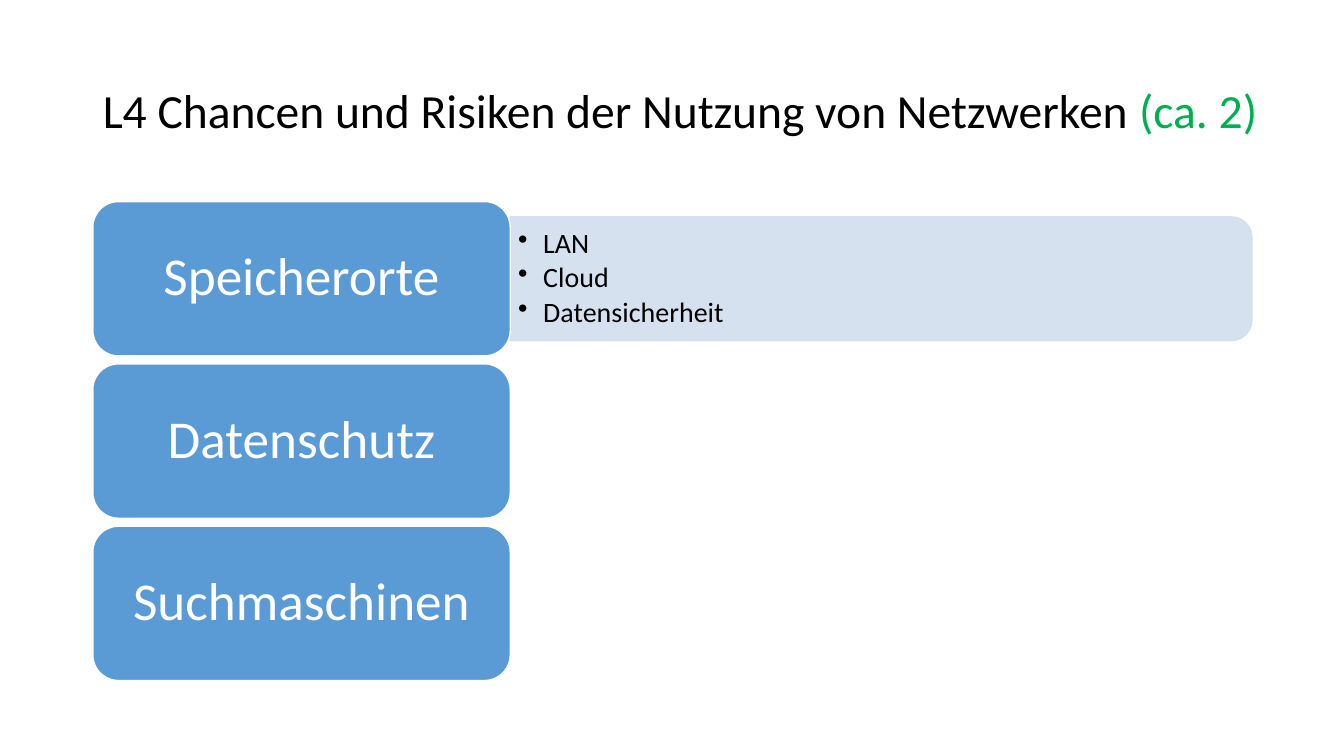
from pptx import Presentation, util as u
from pptx.dml.color import RGBColor
from pptx.enum import shapes, text
from pptx.oxml.ns import qn
from lxml import etree

TITLE = [("L4 Chancen und Risiken der Nutzung von Netzwerken ", "black"),
         ("(ca. 2)", "green")]
TOPICS = [("Speicherorte", ["LAN", "Cloud", "Datensicherheit"]),
          ("Datenschutz", []),
          ("Suchmaschinen", [])]
HEX = {"black": "000000", "green": "00B050", "blue": "5B9BD5",
       "pale": "D2DEEF", "white": "FFFFFF"}
LEFT, TOP, WIDE, HIGH, STEP = 2.34, 5.08, 10.52, 3.89, 4.09
LONG, THICK = 18.69, 3.12


def rgb(name):
    return RGBColor.from_string(HEX[name])


def style(para, size, color, align):
    para.font.name, para.font.size = "Calibri", u.Pt(size)
    para.font.color.rgb = rgb(color)
    para.alignment, para.line_spacing = align, 0.9


def inset(frame, side, edge):
    frame.word_wrap = True
    frame.vertical_anchor = text.MSO_ANCHOR.MIDDLE
    frame.margin_left = frame.margin_right = u.Cm(side)
    frame.margin_top = frame.margin_bottom = u.Cm(edge)


def add_box(kind, x, y, w, h, fill, line):
    box = slide.shapes.add_shape(kind, u.Cm(x), u.Cm(y), u.Cm(w), u.Cm(h))
    box.shadow.inherit = False
    box.fill.solid()
    box.fill.fore_color.rgb = rgb(fill)
    box.line.color.rgb = rgb(line)
    box.line.width = u.Pt(1)
    return box


def add_panel(points, x, mid):
    panel = add_box(shapes.MSO_SHAPE.ROUND_2_SAME_RECTANGLE,
                    x + (LONG - THICK) / 2, mid - LONG / 2, THICK, LONG, "pale", "pale")
    panel.rotation = 90
    for color in panel._element.spPr.iter(qn("a:srgbClr")):
        etree.SubElement(color, qn("a:alpha"), val="90000")
    area = slide.shapes.add_textbox(u.Cm(x), u.Cm(mid - 1.41), u.Cm(18.54), u.Cm(2.82))
    frame = area.text_frame
    inset(frame, 0.2, 0.1)
    frame.text = "\n".join(points)
    for para in frame.paragraphs:
        style(para, 20, "black", text.PP_ALIGN.LEFT)
        para.space_after = u.Pt(3)
        props = para._p.get_or_add_pPr()
        props.set("marL", str(u.Cm(0.63)))
        props.set("indent", str(u.Cm(-0.63)))
        bullet = etree.Element(qn("a:buChar"), char="•")
        props.find(qn("a:defRPr")).addprevious(bullet)


deck = Presentation()
deck.slide_width, deck.slide_height = u.Cm(33.87), u.Cm(19.05)
slide = deck.slides.add_slide(deck.slide_layouts[5])

title = slide.shapes.title
title.left, title.top, title.width, title.height = map(u.Cm, (LEFT, 1.01, 29.77, 3.68))
head = title.text_frame
inset(head, 0.25, 0.13)
head.auto_size = text.MSO_AUTO_SIZE.NONE
para = head.paragraphs[0]
style(para, 34, "black", text.PP_ALIGN.LEFT)
for words, color in TITLE:
    run = para.add_run()
    run.text = words
    run.font.color.rgb = rgb(color)

for row, (name, points) in enumerate(TOPICS):
    y = TOP + row * STEP
    if points:
        add_panel(points, LEFT + WIDE, y + HIGH / 2)
    box = add_box(shapes.MSO_SHAPE.ROUNDED_RECTANGLE, LEFT, y, WIDE, HIGH, "blue", "white")
    inset(box.text_frame, 0.4, 0.2)
    box.text_frame.text = name
    style(box.text_frame.paragraphs[0], 38, "white", text.PP_ALIGN.CENTER)

deck.save("out.pptx")
